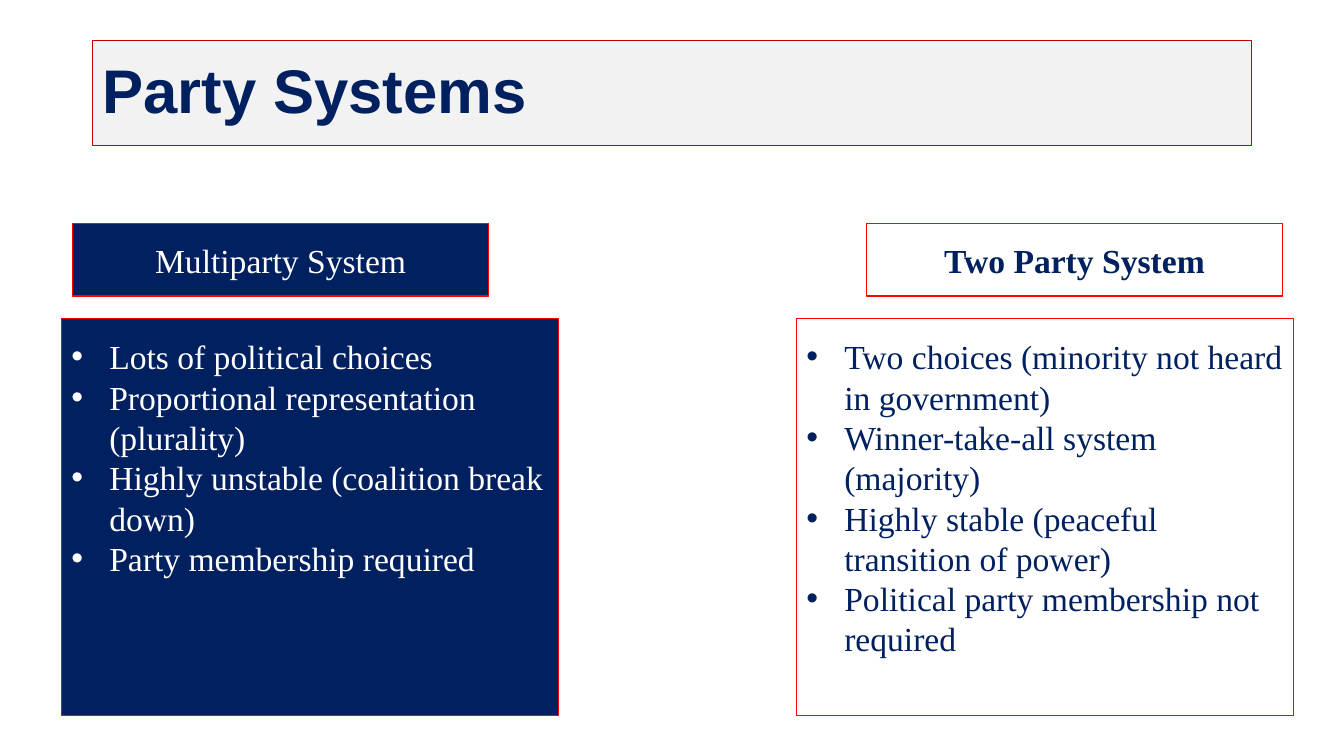
from dataclasses import dataclass

from pptx import Presentation
from pptx.dml.color import RGBColor
from pptx.enum import shapes, text
from pptx.oxml.ns import qn
from pptx.util import Pt


@dataclass(frozen=True)
class Theme:
    """Colours, fonts and type sizes of the slide."""
    navy: RGBColor = RGBColor(0x00, 0x20, 0x60)
    white: RGBColor = RGBColor(0xFF, 0xFF, 0xFF)
    grey: RGBColor = RGBColor(0xF2, 0xF2, 0xF2)
    dark_red: RGBColor = RGBColor(0xC0, 0x00, 0x00)
    red: RGBColor = RGBColor(0xFF, 0x00, 0x00)
    title_font: str = "Arial"
    body_font: str = "Times New Roman"
    title_size: float = 44
    body_size: float = 24
    body_leading: float = 28.8


THEME = Theme()


def add_panel(slide, box, fill, border, border_width):
    """Add an outlined rectangle and return its text frame."""
    panel = slide.shapes.add_shape(shapes.MSO_SHAPE.RECTANGLE, *map(Pt, box))
    panel.shadow.inherit = False
    panel.fill.solid()
    panel.fill.fore_color.rgb = fill
    panel.line.color.rgb = border
    panel.line.width = Pt(border_width)
    frame = panel.text_frame
    frame.word_wrap = True
    frame.vertical_anchor = text.MSO_ANCHOR.MIDDLE
    return frame


def style(paragraph, font, size, color, bold=False, align=text.PP_ALIGN.LEFT):
    """Align a paragraph and format its runs."""
    paragraph.alignment = align
    for run in paragraph.runs:
        run.font.name = font
        run.font.size = Pt(size)
        run.font.bold = bold
        run.font.color.rgb = color


def add_bullet(paragraph, indent):
    """Give a paragraph a round bullet with a hanging indent."""
    properties = paragraph._p.get_or_add_pPr()
    properties.set("marL", str(Pt(indent)))
    properties.set("indent", str(Pt(-indent)))
    bullet_font = properties.makeelement(qn("a:buFont"), {"typeface": "Arial"})
    bullet = properties.makeelement(qn("a:buChar"), {"char": "•"})
    properties.extend([bullet_font, bullet])


def add_title(slide, box, title):
    """Add the title banner."""
    frame = add_panel(slide, box, THEME.grey, THEME.dark_red, 0.75)
    frame.text = title
    heading = frame.paragraphs[0]
    heading.line_spacing = 0.9
    style(heading, THEME.title_font, THEME.title_size, THEME.navy, bold=True)


def add_system(slide, box, header_inset, name, traits, fill, ink, bold):
    """Add a party system: a header above a list of traits."""
    left, top, width, height = box
    header_width, header_height, gap = 297, 52, 16

    header = add_panel(slide, (left + header_inset, top, header_width, header_height),
                       fill, THEME.red, 1)
    header.text = name
    style(header.paragraphs[0], THEME.body_font, THEME.body_size, ink, bold,
          text.PP_ALIGN.CENTER)

    list_offset = header_height + gap
    trait_list = add_panel(slide, (left, top + list_offset, width, height - list_offset),
                           fill, THEME.red, 1)
    trait_list.vertical_anchor = text.MSO_ANCHOR.TOP
    trait_list.margin_top = Pt(12.5)
    trait_list.text = "\n".join(traits)
    for trait in trait_list.paragraphs:
        trait.line_spacing = Pt(THEME.body_leading)
        add_bullet(trait, 27)
        style(trait, THEME.body_font, THEME.body_size, ink)


def main():
    """Build the party systems slide."""
    deck = Presentation()
    deck.slide_width, deck.slide_height = Pt(960), Pt(540)
    slide = deck.slides.add_slide(deck.slide_layouts[6])

    add_title(slide, (66, 28.8, 828, 75.4), "Party Systems")
    add_system(slide, (44, 159.6, 355, 351.6), 8, "Multiparty System", [
        "Lots of political choices",
        "Proportional representation (plurality)",
        "Highly unstable (coalition break down)",
        "Party membership required",
    ], THEME.navy, THEME.white, bold=False)
    add_system(slide, (569, 159.6, 355, 351.6), 50, "Two Party System", [
        "Two choices (minority not heard in government)",
        "Winner-take-all system (majority)",
        "Highly stable (peaceful transition of power)",
        "Political party membership not required",
    ], THEME.white, THEME.navy, bold=True)

    deck.save("out.pptx")


if __name__ == "__main__":
    main()
